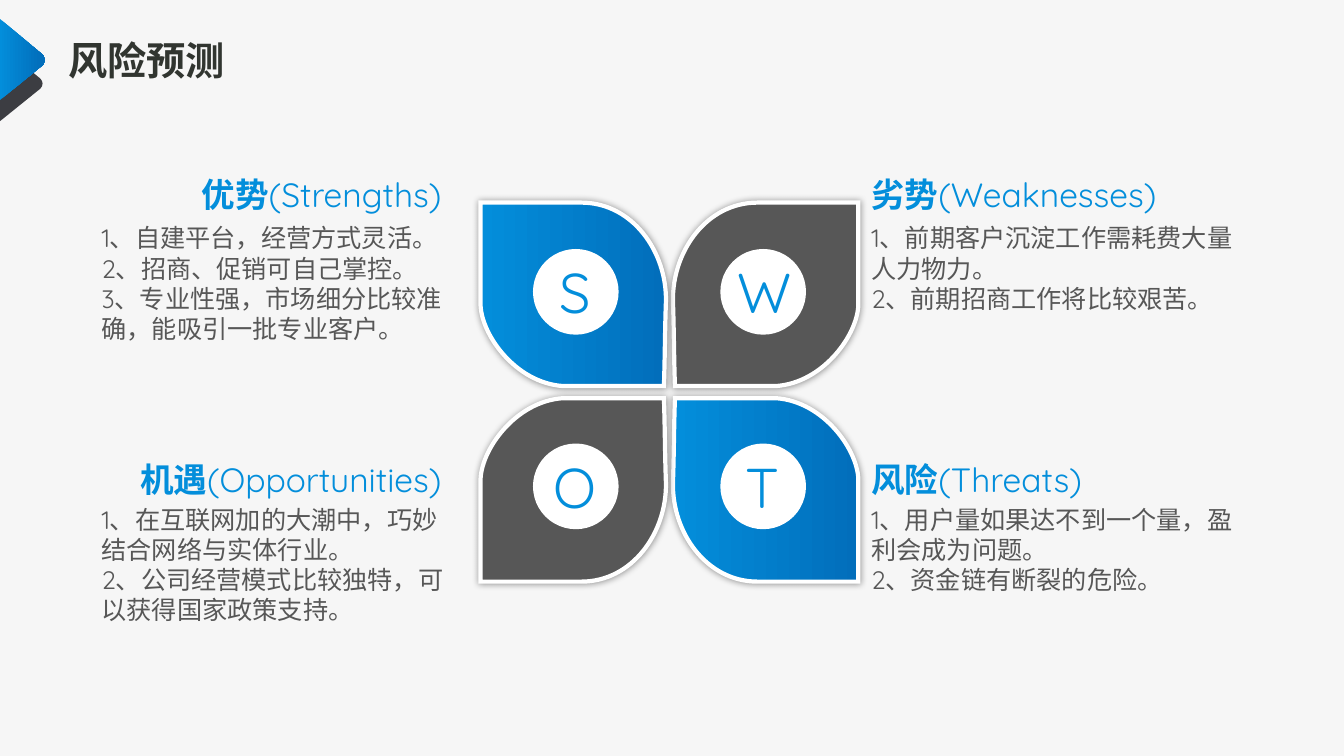
"""Build a SWOT slide on risk forecasting with four mirrored petals."""
import lxml.etree
import pptx
import pptx.dml.color
import pptx.enum.shapes
import pptx.enum.text
import pptx.oxml.ns
import pptx.util

Inches = pptx.util.Inches
Pt = pptx.util.Pt
qn = pptx.oxml.ns.qn
ALIGN = pptx.enum.text.PP_ALIGN
FONT = "Quicksand"
COLORS = {
    "background": "F6F6F6", "title": "313530", "blue": "038EDB", "deep_blue": "026EBB",
    "gray": "575757", "charcoal": "3C3D42", "white": "FFFFFF", "shadow": "000000",
}
FORMATS = {
    "title": {"size": Pt(28), "bold": True},
    "heading": {"size": Pt(24), "bold": True},
    "english": {"size": Pt(24), "bold": False},
    "body": {"size": Pt(18), "bold": False},
    "letter": {"size": Pt(40), "bold": False},
}
CENTER_X = {-1: 6.65, 1: 6.64}
CENTER_Y = 3.89
PETAL = [
    [(0.06, 0.06)],
    [(1.06, 0.06)],
    [(1.54, 0.09), (1.89, 0.59), (1.88, 0.89)],
    [(1.88, 1.88)],
    [(0.88, 1.88)],
    [(0.37, 1.88), (0.03, 1.39), (0.04, 0.9)],
    [(0.05, 0.62), (0.05, 0.34), (0.06, 0.06)],
]
TAB_BACK = [[(-0.01, 0.44)], [(0.4, 0.78)],
            [(0.43, 0.81), (0.43, 0.85), (0.4, 0.88)], [(-0.01, 1.21)]]
TAB_FRONT = [[(-0.01, 0.18)], [(0.42, 0.54)],
             [(0.46, 0.57), (0.46, 0.62), (0.42, 0.65)], [(-0.01, 1)]]
QUADRANTS = [
    ("S", -1, -1, "优势", "(Strengths)",
     ["1、自建平台，经营方式灵活。", "2、招商、促销可自己掌控。",
      "3、专业性强，市场细分比较准确，能吸引一批专业客户。"]),
    ("W", 1, -1, "劣势", "(Weaknesses)",
     ["1、前期客户沉淀工作需耗费大量人力物力。", "2、前期招商工作将比较艰苦。"]),
    ("O", -1, 1, "机遇", "(Opportunities)",
     ["1、在互联网加的大潮中，巧妙结合网络与实体行业。",
      "2、公司经营模式比较独特，可以获得国家政策支持。"]),
    ("T", 1, 1, "风险", "(Threats)",
     ["1、用户量如果达不到一个量，盈利会成为问题。", "2、资金链有断裂的危险。"]),
]


def rgb(name):
    """Return the named colour."""
    return pptx.dml.color.RGBColor.from_string(COLORS[name])


def paint(shape, color):
    """Fill a shape plainly, or with the blue gradient, without line or shadow."""
    if color == "blue":
        shape.fill.gradient()
        shape.fill.gradient_angle = 0
        for stop, name in zip(shape.fill.gradient_stops, ("blue", "deep_blue")):
            stop.color.rgb = rgb(name)
    else:
        shape.fill.solid()
        shape.fill.fore_color.rgb = rgb(color)
    shape.line.fill.background()
    shape.shadow.inherit = False


def add_outline(slide, segments, color):
    """Draw a closed outline of one-point straight and three-point curved segments."""
    corners = [tuple(map(Inches, segment[-1])) for segment in segments]
    builder = slide.shapes.build_freeform(*corners[0])
    builder.add_line_segments(corners[1:], close=True)
    outline = builder.convert_to_shape()
    sides = list(outline._element.iter(qn("a:lnTo")))
    for side, segment in zip(sides, segments[1:]):
        if len(segment) == 3:
            curve = lxml.etree.Element(qn("a:cubicBezTo"))
            for x, y in segment:
                lxml.etree.SubElement(curve, qn("a:pt"), x=str(Inches(x) - outline.left),
                                      y=str(Inches(y) - outline.top))
            side.getparent().replace(side, curve)
    paint(outline, color)
    return outline


def add_petal(slide, side, level, color):
    """Draw one white-edged petal mirrored about the centre."""
    segments = [[(CENTER_X[side] + side * x, CENTER_Y + level * y) for x, y in segment]
                for segment in PETAL]
    petal = add_outline(slide, segments, color)
    petal.line.color.rgb = rgb("white")
    petal.line.width = Pt(3)
    properties = petal._element.spPr
    lxml.etree.SubElement(properties.find(qn("a:ln")), qn("a:miter"), lim="800000")
    glow = lxml.etree.SubElement(properties.find(qn("a:effectLst")), qn("a:outerShdw"),
                                 blurRad=str(Pt(5)), dist="0", dir="0",
                                 algn="ctr", rotWithShape="0")
    tint = lxml.etree.SubElement(glow, qn("a:srgbClr"), val=COLORS["shadow"])
    lxml.etree.SubElement(tint, qn("a:alpha"), val="40000")


def add_text(slide, box, paragraphs, color, align=ALIGN.LEFT):
    """Add a text box whose paragraphs are lists of (text, format) runs."""
    frame = slide.shapes.add_textbox(*map(Inches, box)).text_frame
    frame.word_wrap = True
    frame.auto_size = pptx.enum.text.MSO_AUTO_SIZE.SHAPE_TO_FIT_TEXT
    for index, runs in enumerate(paragraphs):
        paragraph = frame.add_paragraph() if index else frame.paragraphs[0]
        paragraph.alignment = align
        for text, style in runs:
            run = paragraph.add_run()
            run.text = text
            for attribute, value in {"name": FONT, **FORMATS[style]}.items():
                setattr(run.font, attribute, value)
            run.font.color.rgb = rgb(color)
            lxml.etree.SubElement(run.font._element, qn("a:ea"), typeface=FONT)


def add_badge(slide, letter, side, level):
    """Add the white disc and its letter."""
    left = 5.29 if side < 0 else 7.15
    top = 2.47 if level < 0 else 4.4
    disc = slide.shapes.add_shape(pptx.enum.shapes.MSO_SHAPE.OVAL,
                                  *map(Inches, (left, top, 0.85, 0.85)))
    paint(disc, "white")
    add_text(slide, (left + 0.07, top + 0.04, 0.7, 0.77), [[(letter, "letter")]],
             "blue", ALIGN.CENTER)


def add_quadrant_text(slide, side, level, chinese, english, points):
    """Add the heading and the numbered points of one quadrant."""
    left, heading_width, body_width = (0.91, 3.57, 3.75) if side < 0 else (8.55, 3.13, 4)
    heading_top, body_top = (1.68, 2.16) if level < 0 else (4.5, 4.95)
    add_text(slide, (left, heading_top, heading_width, 0.5),
             [[(chinese, "heading"), (english, "english")]], "blue",
             ALIGN.RIGHT if side < 0 else ALIGN.LEFT)
    add_text(slide, (left, body_top, body_width, 1.31 if side < 0 else 1.01),
             [[(point, "body")] for point in points], "gray")


def main():
    """Build and save the slide."""
    deck = pptx.Presentation()
    deck.slide_width, deck.slide_height = Inches(13.34), Inches(7.5)
    slide = deck.slides.add_slide(deck.slide_layouts[6])
    slide.background.fill.solid()
    slide.background.fill.fore_color.rgb = rgb("background")
    add_text(slide, (0.58, 0.31, 5.12, 0.57), [[("风险预测", "title")]], "title")
    add_outline(slide, TAB_BACK, "charcoal")
    add_outline(slide, TAB_FRONT, "blue")
    for _, side, level, *_ in reversed(QUADRANTS):
        add_petal(slide, side, level, "blue" if side == level else "gray")
    for letter, side, level, *wording in QUADRANTS:
        add_badge(slide, letter, side, level)
        add_quadrant_text(slide, side, level, *wording)
    deck.save("out.pptx")


if __name__ == "__main__":
    main()
